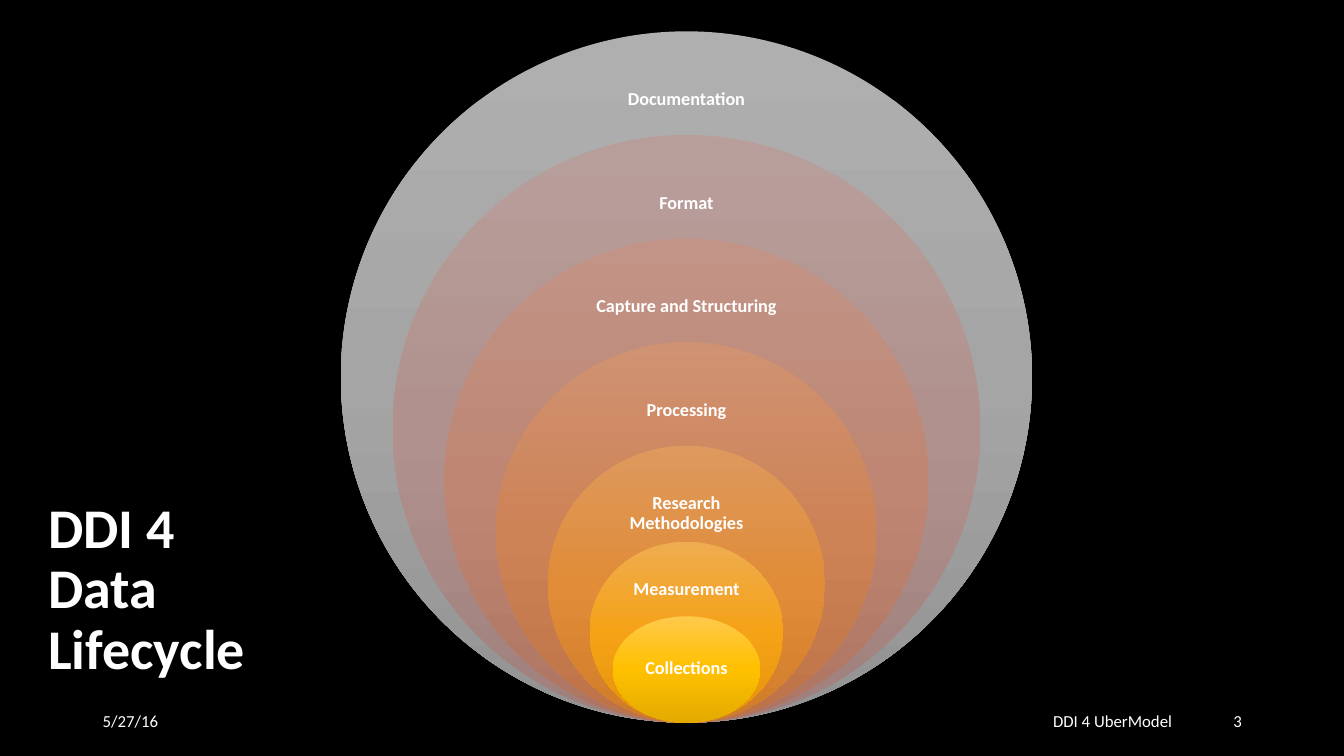
import copy
import pptx
import pptx.util
import pptx.dml.color
import pptx.enum.shapes
import pptx.enum.text

Cm = pptx.util.Cm
RGBColor = pptx.dml.color.RGBColor
ALIGN = pptx.enum.text.PP_ALIGN
ANCHOR = pptx.enum.text.MSO_ANCHOR
OVAL = pptx.enum.shapes.MSO_SHAPE.OVAL

BLACK = RGBColor(0x00, 0x00, 0x00)
WHITE = RGBColor(0xFF, 0xFF, 0xFF)
GRAY = (RGBColor(0xAF, 0xAF, 0xAF), RGBColor(0xA5, 0xA5, 0xA5), RGBColor(0x93, 0x93, 0x93))
MAUVE = (RGBColor(0xB8, 0x9E, 0x9B), RGBColor(0xB0, 0x91, 0x8D), RGBColor(0x9F, 0x80, 0x7C))
ROSE = (RGBColor(0xC2, 0x94, 0x87), RGBColor(0xBE, 0x86, 0x73), RGBColor(0xAD, 0x75, 0x62))
RUST = (RGBColor(0xCF, 0x92, 0x72), RGBColor(0xCE, 0x83, 0x56), RGBColor(0xBD, 0x73, 0x47))
AMBER = (RGBColor(0xDE, 0x99, 0x5E), RGBColor(0xE0, 0x8C, 0x38), RGBColor(0xD0, 0x7C, 0x29))
HONEY = (RGBColor(0xEF, 0xAC, 0x50), RGBColor(0xF5, 0xA2, 0x17), RGBColor(0xE5, 0x93, 0x09))
GOLD = (RGBColor(0xFF, 0xC9, 0x4B), RGBColor(0xFF, 0xC0, 0x00), RGBColor(0xE3, 0xAB, 0x00))

FONT = "Calibri"
STEP = 2.61
BIG = [
    ("Documentation", GRAY, 6.53),
    ("Format", MAUVE, 6.38),
    ("Capture and Structuring", ROSE, 6.3),
    ("Processing", RUST, 5.18),
    ("Research\nMethodologies", AMBER, 4.52),
]
SMALL = [
    ("Measurement", HONEY, 4.88, 4.56, 3.33, 1.09, 1.21),
    ("Collections", GOLD, 3.71, 2.68, 2.62, 1.3, 1.31),
]


def write(shapes, box, text, size, bold=False, align=ALIGN.LEFT,
          space=None, pad=0.25, wrap=True):
    area = shapes.add_textbox(*[Cm(n) for n in box])
    frame = area.text_frame
    frame.word_wrap = wrap
    frame.vertical_anchor = ANCHOR.MIDDLE
    frame.margin_left = frame.margin_right = Cm(pad)
    para = frame.paragraphs[0]
    para.alignment = align
    if space:
        para.line_spacing = space
    for row, line in enumerate(text.split("\n")):
        if row:
            para.add_line_break()
        run = para.add_run()
        run.text = line
        run.font.name = FONT
        run.font.size = pptx.util.Pt(size)
        run.font.bold = bold
        run.font.color.rgb = WHITE


def shade(shape, tones):
    fill = shape.fill
    fill.gradient()
    fill.gradient_angle = 270
    stops = shape.element.spPr.find(".//" + pptx.oxml.ns.qn("a:gsLst"))
    stops.insert(1, copy.deepcopy(stops[0]))
    for stop, place, tone in zip(fill.gradient_stops, (0, 0.5, 1), tones):
        stop.position = place
        stop.color.rgb = tone


def add_ring(shapes, mid, base, ring):
    text, tones, wide, high, span, tall, drop = ring
    top = base - high
    oval = shapes.add_shape(OVAL, Cm(mid - wide / 2), Cm(top), Cm(wide), Cm(high))
    oval.shadow.inherit = False
    oval.line.fill.background()
    shade(oval, tones)
    box = (mid - span / 2, top + drop - tall / 2, span, tall)
    write(shapes, box, text, 13, True, ALIGN.CENTER, 0.9, 0.1)


def add_rings(slide, left, top, size):
    group = slide.shapes.add_group_shape()
    rings = [
        (text, tones, size - STEP * rank, size - STEP * rank, span, 1.72, 1.72)
        for rank, (text, tones, span) in enumerate(BIG)
    ]
    for ring in rings + SMALL:
        add_ring(group.shapes, left + size / 2, top + size, ring)


def add_title(slide, left, top, wide, high):
    write(slide.shapes, (left, top, wide, high), "DDI 4 Data Lifecycle", 40, True, space=0.9)


def add_foot(slide, left, top, wide, high):
    shapes = slide.shapes
    part = 7.62
    write(shapes, (left + wide - part, top, part, high), "3", 12, align=ALIGN.RIGHT)
    write(shapes, (left, top, part, high), "5/27/16", 12)
    write(shapes, (left + 23.95, top + 0.13, 3.56, 0.76), "DDI 4 UberModel", 12, wrap=False)


def main():
    deck = pptx.Presentation()
    deck.slide_width = Cm(33.87)
    deck.slide_height = Cm(19.05)
    slide = deck.slides.add_slide(deck.slide_layouts[6])
    back = slide.background.fill
    back.solid()
    back.fore_color.rgb = BLACK
    add_title(slide, 0.97, 12.42, 6.35, 4.93)
    add_rings(slide, 8.59, 0.79, 17.42)
    add_foot(slide, 2.34, 17.65, 29.21, 1.02)
    deck.save("out.pptx")


if __name__ == "__main__":
    main()
